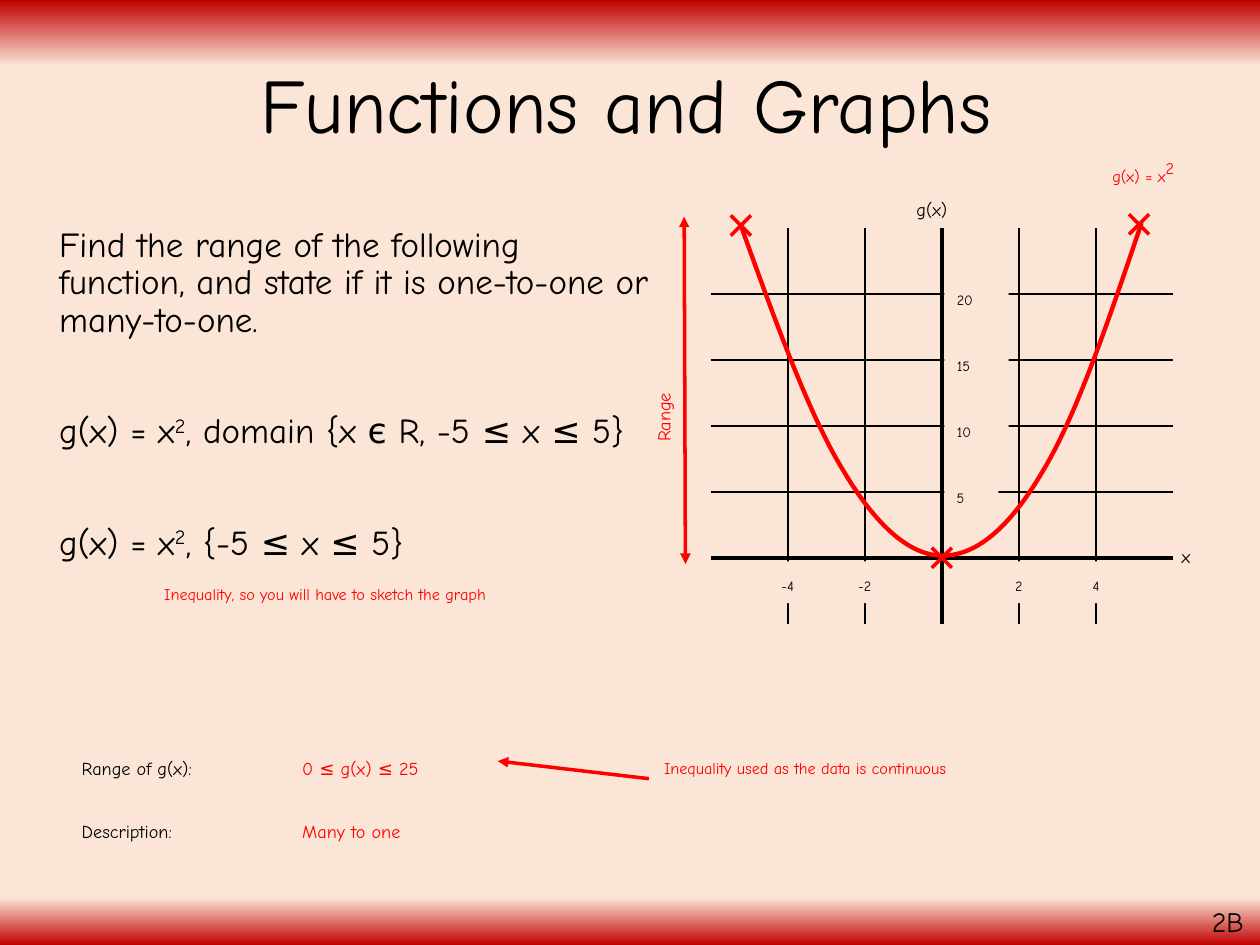
import copy

import pptx
import pptx.dml.color
import pptx.enum.shapes
import pptx.enum.text
import pptx.oxml
import pptx.oxml.ns
import pptx.util

RGB = pptx.dml.color.RGBColor
BLACK, RED = RGB(0, 0, 0), RGB(0xFF, 0, 0)
CREAM, DARK_RED = RGB(0xFB, 0xE5, 0xD6), RGB(0xC0, 0, 0)
FONT = "Comic Neue"
ALIGN = pptx.enum.text.PP_ALIGN
LINE = pptx.enum.shapes.MSO_CONNECTOR.STRAIGHT
SMALL, RAISED = 1000, 30000  # baseline shifts in 1/1000 %; any shift also shrinks the letters
inch = pptx.util.Inches
qn = pptx.oxml.ns.qn


def add_run(p, text, size, color=BLACK, baseline=None):
    r = p.add_run()
    r.text = text
    r.font.size, r.font.name = pptx.util.Pt(size), FONT
    r.font.color.rgb = color
    if baseline:
        r.font._element.set("baseline", str(baseline))


def set_text(sp, runs, size, color=BLACK, align=ALIGN.LEFT):
    """Fill a box with (text, baseline) runs."""
    tf = sp.text_frame
    tf.word_wrap = True
    tf.auto_size = pptx.enum.text.MSO_AUTO_SIZE.SHAPE_TO_FIT_TEXT
    tf.vertical_anchor = pptx.enum.text.MSO_ANCHOR.TOP
    p = tf.paragraphs[0]
    p.alignment = align
    for text, baseline in runs:
        add_run(p, text, size, color, baseline)


def add_label(s, box, text, size=18, color=BLACK, align=ALIGN.LEFT, baseline=SMALL):
    sp = s.shapes.add_textbox(*map(inch, box))
    set_text(sp, [(text, baseline)], size, color, align)
    return sp


def add_line(shapes, start, end, color=BLACK, width=1, ends=()):
    c = shapes.add_connector(LINE, *map(inch, (*start, *end)))
    c.line.color.rgb, c.line.width = color, pptx.util.Pt(width)
    ln = c.line._get_or_add_ln()
    for tag in ends:
        ln.append(pptx.oxml.parse_xml(
            f'<a:{tag} {pptx.oxml.ns.nsdecls("a")} type="triangle"/>'))
    pptx.oxml.ns  # namespace helpers also serve the effect list below
    c._element.spPr.append(pptx.oxml.parse_xml(
        f'<a:effectLst {pptx.oxml.ns.nsdecls("a")}/>'))


def set_background(s):
    fill = s.background.fill
    fill.gradient()
    fill.gradient_angle = 270
    stops = s.element.find(".//" + qn("a:gsLst"))
    for stop in list(stops):
        stops.append(copy.deepcopy(stop))
    colors = (DARK_RED, CREAM, CREAM, DARK_RED)
    for stop, position, color in zip(fill.gradient_stops, (0, 0.07, 0.95, 1), colors):
        stop.position, stop.color.rgb = position, color


def place(sp, box):
    sp.left, sp.top, sp.width, sp.height = map(inch, box)


def title(s, box):
    sp = s.shapes.title
    place(sp, box)
    sp.text_frame.vertical_anchor = pptx.enum.text.MSO_ANCHOR.MIDDLE
    p = sp.text_frame.paragraphs[0]
    p.alignment, p.line_spacing = ALIGN.CENTER, 0.9
    add_run(p, "Functions and Graphs", 44)


def question(s, box):
    sp = s.placeholders[1]
    place(sp, box)
    tf = sp.text_frame
    tf.auto_size = pptx.enum.text.MSO_AUTO_SIZE.NONE
    paragraphs = [
        ["Find the range of the following function, and state if it is "
         "one-to-one or many-to-one."],
        ["g(x) = x", "2", ", domain {x є R, -5 ≤ x ≤ 5}"],
        ["g(x) = x", "2", ", {-5 ≤ x ≤ 5}"],
    ]
    for i, runs in enumerate(paragraphs):
        p = tf.add_paragraph() if i else tf.paragraphs[0]
        p.line_spacing, p.space_before = 0.9, pptx.util.Pt(42 if i else 0)
        pPr = p._p.get_or_add_pPr()
        pPr.set("marL", str(inch(0.25)))
        pPr.set("indent", "0")
        pPr.append(pptx.oxml.parse_xml(f'<a:buNone {pptx.oxml.ns.nsdecls("a")}/>'))
        for text in runs:
            add_run(p, text, 20, BLACK, RAISED if text == "2" else None)
    # Hint below the last formula
    x, y, w, h = box
    add_label(s, (x + 0.46, y + 2.75, 4, 0.64),
              "Inequality, so you will have to sketch the graph", 16, RED, ALIGN.CENTER)


def answers(s, box):
    x, y, w, h = box
    rows = [("Range of g(x):", "0 ≤ g(x) ≤ 25"), ("Description:", "Many to one")]
    for i, (name, answer) in enumerate(rows):
        top = y + i * h / len(rows)
        add_label(s, (x, top, 1.83, 0.4), name)
        add_label(s, (x + 1.75, top, 2.1, 0.4), answer, color=RED)
    # Remark with its arrow
    add_line(s.shapes, (x + 4.6, y + 0.32), (x + 3.4, y + 0.18), RED, 2, ["tailEnd"])
    add_label(s, (x + 4.55, y + 0.02, 2.58, 0.64),
              "Inequality used as the data is continuous", 16, RED, ALIGN.CENTER)


def axis_number(s, box, text, align):
    sp = s.shapes.add_shape(pptx.enum.shapes.MSO_SHAPE.RECTANGLE, *map(inch, box))
    sp.shadow.inherit = False
    sp.fill.solid()
    sp.fill.fore_color.rgb = CREAM
    sp.line.fill.background()
    set_text(sp, [(text, SMALL)], 14, align=align)


def cross(s, x, y, r=0.08):
    shapes = s.shapes.add_group_shape().shapes
    for d in (r, -r):
        add_line(shapes, (x - r, y - d), (x + r, y + d), RED, 2)


def curve(s, points):
    """One smooth outline through a start point and triples of Bezier points."""
    fb = s.shapes.build_freeform(*map(inch, points[0]), scale=1.0)
    fb.add_line_segments([tuple(map(inch, pt)) for pt in points[1:]], close=False)
    sp = fb.convert_to_shape()
    sp.shadow.inherit = False
    sp.fill.background()
    sp.line.color.rgb, sp.line.width = RED, pptx.util.Pt(2.5)
    outline = sp._element.find(".//" + qn("a:path"))
    segments = outline.findall(qn("a:lnTo"))
    for i in range(0, len(segments), 3):
        bezier = pptx.oxml.parse_xml(f'<a:cubicBezTo {pptx.oxml.ns.nsdecls("a")}/>')
        for segment in segments[i:i + 3]:
            bezier.append(segment[0])
            outline.remove(segment)
        outline.append(bezier)


def graph(s, box):
    x, y, w, h = box
    col, row = w / 6, h / 6
    x0, y0 = x + 3 * col, y + 5 * row  # origin
    # Grid and axes
    for i in range(1, 6):
        add_line(s.shapes, (x, y + i * row), (x + w, y + i * row), width=2.5 if i == 5 else 1)
    for i in range(1, 6):
        add_line(s.shapes, (x + i * col, y), (x + i * col, y + h), width=2.5 if i == 3 else 1)
    # Numbers on the axes
    for n, width in ((2, 0.33), (4, 0.33), (-2, 0.49), (-4, 0.42)):
        axis_number(s, (x0 + n / 2 * col - width / 2, y0 + 0.03, width, 0.33),
                    str(n), ALIGN.CENTER)
    for n in (5, 10, 15, 20):
        axis_number(s, (x0 + 0.02, y0 - n / 5 * row - 0.15, 0.43 if n == 5 else 0.51, 0.33),
                    str(n), ALIGN.LEFT)
    # Names
    add_label(s, (x + w - 0.03, y0 - 0.25, 0.36, 0.4), "x")
    add_label(s, (x0 - 0.3, y - 0.39, 0.67, 0.4), "g(x)")
    sp = s.shapes.add_textbox(*map(inch, (x + w - 0.58, y - 0.63, 1.19, 0.37)))
    set_text(sp, [("g(x) = x", SMALL), ("2", RAISED)], 16, RED)
    # Curve with its end points and vertex
    right, left = (x + 3.42, y - 0.04), (x + 0.24, y - 0.02)
    inner = [(3.16, 0.73), (2.9, 1.5), (2.63, 1.94), (2.37, 2.38), (2.11, 2.6), (1.84, 2.6),
             (1.58, 2.6), (1.31, 2.36), (1.05, 1.92), (0.78, 1.48), (0.51, 0.73)]
    curve(s, [right, *((x + dx, y + dy) for dx, dy in inner), left])
    for cx, cy in ((x0, y0), left, (right[0] - 0.02, right[1] + 0.01)):
        cross(s, cx, cy)
    # Extent of the range
    add_line(s.shapes, (x - 0.21, y - 0.09), (x - 0.2, y0 + 0.05), RED, 2,
             ["headEnd", "tailEnd"])
    add_label(s, (x - 0.91, y + 1.1, 0.99, 0.4), "Range", color=RED).rotation = 270


def main():
    prs = pptx.Presentation()
    prs.slide_width, prs.slide_height = inch(10), inch(7.5)
    s = prs.slides.add_slide(prs.slide_layouts[1])
    set_background(s)
    title(s, (0.66, 0.14, 8.62, 1.45))
    question(s, (0.12, 1.75, 5.19, 2.99))
    answers(s, (0.55, 5.86, 7.13, 1))
    graph(s, (5.64, 1.81, 3.67, 3.14))
    add_label(s, (9.52, 7.13, 0.56, 0.37), "2B", 16, baseline=None)
    prs.save("out.pptx")


if __name__ == "__main__":
    main()
